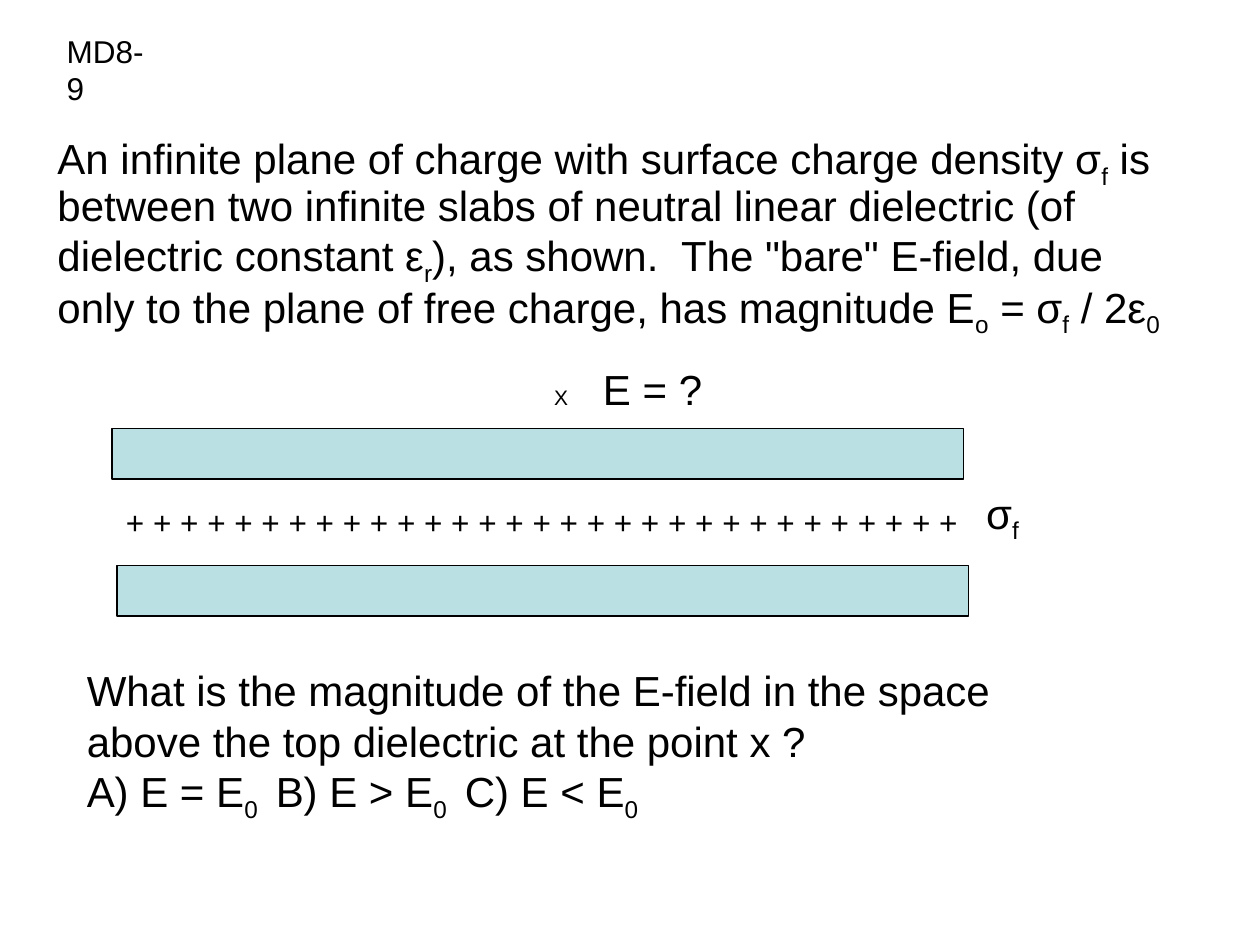
from dataclasses import dataclass

from pptx import Presentation
from pptx.dml.color import RGBColor
from pptx.enum.shapes import MSO_SHAPE
from pptx.enum.text import MSO_ANCHOR, MSO_AUTO_SIZE, PP_ALIGN
from pptx.util import Cm, Pt


@dataclass(frozen=True)
class Theme:
    font: str = "Arial"
    ink: RGBColor = RGBColor(0x00, 0x00, 0x00)
    dielectric: RGBColor = RGBColor(0xBB, 0xE0, 0xE3)
    body: int = 24
    label: int = 18
    point: int = 12
    outline: float = 0.75


@dataclass(frozen=True)
class Span:
    text: str
    size: int
    subscript: bool = False


class SlideBuilder:
    def __init__(self, slide, theme):
        self.slide = slide
        self.theme = theme

    def formula(self, *parts):
        """Make spans from parts that alternate between baseline and subscript."""
        return [Span(part, self.theme.body, i % 2 == 1) for i, part in enumerate(parts)]

    def fill_frame(self, frame, paragraphs, wrap):
        frame.word_wrap = wrap
        frame.auto_size = MSO_AUTO_SIZE.NONE
        frame.vertical_anchor = MSO_ANCHOR.TOP
        for i, spans in enumerate(paragraphs):
            paragraph = frame.add_paragraph() if i else frame.paragraphs[0]
            paragraph.alignment = PP_ALIGN.LEFT
            for span in spans:
                run = paragraph.add_run()
                run.text = span.text
                run.font.name = self.theme.font
                run.font.size = Pt(span.size)
                run.font.color.rgb = self.theme.ink
                if span.subscript:
                    run._r.get_or_add_rPr().set("baseline", "-25000")

    def title(self, text, left, top, width, height):
        title = self.slide.shapes.title
        title.left, title.top, title.width, title.height = map(Cm, (left, top, width, height))
        self.fill_frame(title.text_frame, [[Span(text, self.theme.label)]], wrap=False)

    def text(self, paragraphs, left, top, width, height, wrap=True):
        box = self.slide.shapes.add_textbox(*map(Cm, (left, top, width, height)))
        self.fill_frame(box.text_frame, paragraphs, wrap)
        return box

    def slab(self, left, top, width, height):
        slab = self.slide.shapes.add_shape(
            MSO_SHAPE.RECTANGLE, *map(Cm, (left, top, width, height)))
        slab.shadow.inherit = False
        slab.fill.solid()
        slab.fill.fore_color.rgb = self.theme.dielectric
        slab.line.color.rgb = self.theme.ink
        slab.line.width = Pt(self.theme.outline)
        return slab

    def group(self, members):
        self.slide.shapes.add_group_shape(members)


def main():
    theme = Theme()
    deck = Presentation()
    deck.slide_width, deck.slide_height = Cm(25.4), Cm(19.05)
    builder = SlideBuilder(deck.slides.add_slide(deck.slide_layouts[5]), theme)

    builder.title("MD8-9", 1.09, 0.51, 2.41, 1.02)

    setup = builder.text([builder.formula(
        "An infinite plane of charge with surface charge density σ", "f",
        " is between two infinite slabs of neutral linear dielectric (of dielectric constant ε",
        "r",
        "), as shown.  The \"bare\" E-field, due only to the plane of free charge, "
        "has magnitude E", "o", " = σ", "f", " / 2ε", "0",
    )], 0.91, 2.57, 23.04, 4.29)
    setup_paragraph = setup.text_frame.paragraphs[0]
    setup_paragraph.line_spacing = 0.9
    setup_paragraph.space_before = Pt(0.2 * theme.body)

    charges = builder.text(
        [[Span(" ".join("+" * 31), theme.label)]], 2.29, 10.01, 17.48, 1.02, wrap=False)
    density = builder.text([builder.formula("σ", "f")], 19.63, 9.7, 2.01, 1.27)
    slabs = [builder.slab(left, top, 17.17, 1.02)
             for left, top in ((2.26, 8.64), (2.36, 11.4))]
    builder.group([charges, density, *slabs])

    builder.text([[Span("X", theme.point), Span("   E = ?", theme.body)]],
                 10.92, 7.21, 3.53, 1.27, wrap=False)

    builder.text([
        builder.formula("What is the magnitude of the E-field in the space "
                        "above the top dielectric at the point x ?"),
        builder.formula("A) E = E", "0", "\tB) E > E", "0\t", "C) E < E", "0"),
    ], 1.5, 13.28, 21.21, 3.3)

    deck.save("out.pptx")


if __name__ == "__main__":
    main()
